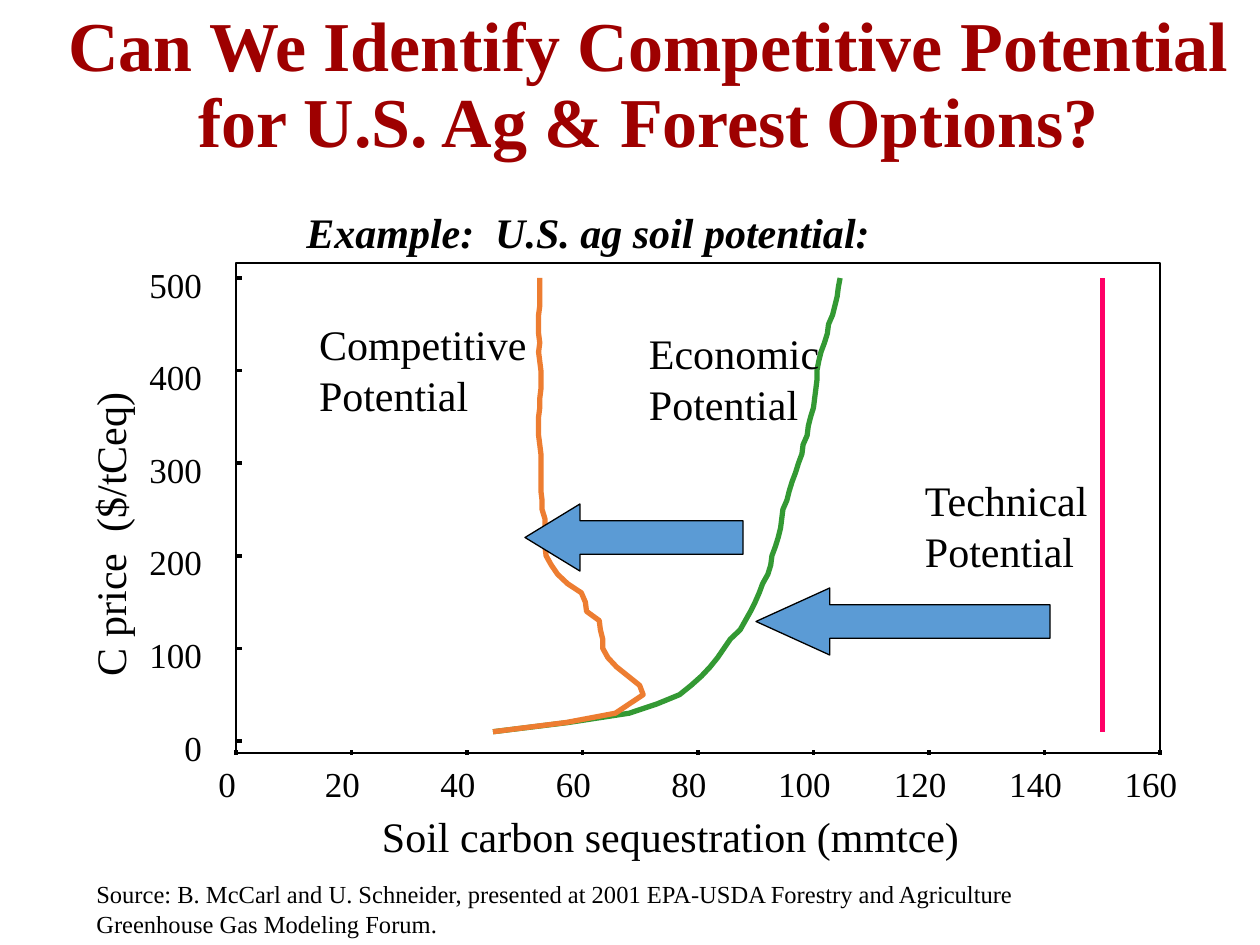
from lxml import etree
from pptx import Presentation
from pptx import util as u
from pptx.dml.color import RGBColor
from pptx.enum import shapes, text
from pptx.oxml.ns import qn

FONT = "Times New Roman"
BLACK = "000000"
PRICE_MAX, PRICE_STEP = 500, 100
CARBON_MAX, CARBON_STEP = 160, 20

# Sequestration (mmtce) at carbon prices of 10, 20, ... 500 $/tCeq
TECHNICAL = [150] * 50
ECONOMIC = [
    44.5, 57.6, 68.1, 72.9, 76.8, 78.8, 80.6, 82.1, 83.4, 84.5,
    85.6, 87.3, 88.2, 89.1, 89.9, 90.6, 91.2, 92.1, 92.6, 92.8,
    93.4, 93.9, 94.3, 94.5, 94.7, 95.4, 95.8, 96.3, 96.9, 97.4,
    98.0, 98.2, 98.9, 99.1, 99.5, 100, 100.2, 100.4, 100.6, 100.6,
    100.9, 101.3, 101.9, 102.4, 102.6, 103.3, 103.7, 104.1, 104.3, 104.6,
]
COMPETITIVE = [
    44.5, 57.2, 65.7, 68.1, 70.5, 69.9, 67.9, 65.9, 64.4, 63.5,
    63.5, 63.1, 62.9, 60.7, 60.5, 59.8, 57.4, 55.7, 54.6, 53.7,
    53.5, 53.7, 53.5, 53.5, 53.0, 53.0, 52.8, 52.8, 52.8, 52.8,
    52.8, 52.6, 52.4, 52.4, 52.4, 52.6, 52.6, 52.8, 52.8, 52.8,
    52.6, 52.4, 52.6, 52.4, 52.4, 52.4, 52.6, 52.6, 52.6, 52.6,
]


def px(length):
    return u.Emu(round(length * 914400 / 126))


def color(hex_string):
    return RGBColor.from_string(hex_string)


def set_all(target, values):
    for name, value in values.items():
        setattr(target, name, value)


def add_text(parent, box, lines, size, inset=True, hue=BLACK, align=text.PP_ALIGN.LEFT,
             frame_format=None, font_format=None, spacing=None):
    label = parent.add_textbox(*map(px, box))
    frame = label.text_frame
    set_all(frame, {"word_wrap": False, "auto_size": text.MSO_AUTO_SIZE.SHAPE_TO_FIT_TEXT})
    if not inset:
        set_all(frame, dict.fromkeys(
            ("margin_left", "margin_top", "margin_right", "margin_bottom"), 0))
    set_all(frame, frame_format or {})
    for number, line in enumerate(lines):
        paragraph = frame.add_paragraph() if number else frame.paragraphs[0]
        set_all(paragraph, {"alignment": align, "line_spacing": spacing})
        run = paragraph.add_run()
        run.text = line
        set_all(run.font, {"name": FONT, "size": u.Pt(size), **(font_format or {})})
        run.font.color.rgb = color(hue)
    return label


def style_outline(shape, hue, width, fill=None):
    shape.shadow.inherit = False
    if fill:
        shape.fill.solid()
        shape.fill.fore_color.rgb = color(fill)
    else:
        shape.fill.background()
    shape.line.color.rgb = color(hue)
    shape.line.width = u.Pt(width)


def add_tick(parent, x1, y1, x2, y2):
    tick = parent.add_connector(shapes.MSO_CONNECTOR.STRAIGHT, *map(px, (x1, y1, x2, y2)))
    tick.line.color.rgb = color(BLACK)
    tick.line.width = 0
    etree.SubElement(tick._element.spPr, qn("a:effectLst"))


def add_curve(parent, amounts, hue, x_of, y_of):
    points = [(px(x_of(amount)), px(y_of(10 * number)))
              for number, amount in enumerate(amounts, 1)]
    builder = parent.build_freeform(*points[0], scale=1.0)
    builder.add_line_segments(points[1:], close=False)
    style_outline(builder.convert_to_shape(), hue, 3)


def add_plot(slide, box):
    left, top, width, height = box
    bottom = top + height
    parent = slide.shapes.add_group_shape().shapes

    def x_of(carbon):
        return left + carbon * width / CARBON_MAX

    def y_of(price):
        return top + 478 - price * 463 / PRICE_MAX

    # Price axis
    for price in range(0, PRICE_MAX + 1, PRICE_STEP):
        y = y_of(price)
        add_tick(parent, left, y, left + 6, y)
        label_width = 18 * len(str(price))
        add_text(parent, (left - 34 - label_width, y - 15, label_width, 43), [str(price)],
                 20, inset=False, align=text.PP_ALIGN.RIGHT)

    # Carbon axis
    for carbon in range(0, CARBON_MAX + 1, CARBON_STEP):
        x = x_of(carbon)
        add_tick(parent, x, bottom + 2, x, bottom - 3)
        label_width = 18 * len(str(carbon))
        add_text(parent, (x - 9 - label_width / 2, bottom + 9, label_width, 43), [str(carbon)],
                 20, inset=False, align=text.PP_ALIGN.CENTER)

    # Frame and axis titles
    frame = parent.add_shape(shapes.MSO_SHAPE.RECTANGLE, *map(px, box))
    style_outline(frame, BLACK, 0)
    price_title = add_text(parent, (left - 289, top + 226, 324, 50), ["C price  ($/tCeq)"],
                           24, inset=False, frame_format={"word_wrap": True})
    price_title.rotation = 270
    add_text(parent, (left + 146, bottom + 58, 629, 50), ["Soil carbon sequestration (mmtce)"],
             24, inset=False, frame_format={"word_wrap": True})

    # Curves and their names
    for name, amounts, hue, dx, dy, name_width in (
        ("Technical", TECHNICAL, "FF0066", 689, 212, 164),
        ("Economic", ECONOMIC, "339933", 413, 65, 171),
        ("Competitive", COMPETITIVE, "ED7D31", 83, 56, 209),
    ):
        add_curve(parent, amounts, hue, x_of, y_of)
        add_text(parent, (left + dx, top + dy, name_width, 102), [name, "Potential"],
                 24, inset=False)


def add_left_arrow(slide, box, head_length):
    arrow = slide.shapes.add_shape(shapes.MSO_SHAPE.LEFT_ARROW, *map(px, box))
    arrow.adjustments[0] = 0.5
    arrow.adjustments[1] = head_length
    style_outline(arrow, BLACK, 0.75, fill="5B9BD5")


def add_heading(slide, box):
    add_text(slide.shapes, box,
             ["Can We Identify Competitive Potential for U.S. Ag & Forest Options?"],
             40, hue="9E0000", align=text.PP_ALIGN.CENTER, spacing=0.9,
             frame_format={"word_wrap": True, "auto_size": text.MSO_AUTO_SIZE.NONE,
                           "vertical_anchor": text.MSO_ANCHOR.MIDDLE},
             font_format={"bold": True})


def main():
    deck = Presentation()
    set_all(deck, {"slide_width": px(1260), "slide_height": px(945)})
    slide = deck.slides.add_slide(deck.slide_layouts[6])

    add_plot(slide, (236, 263, 924, 490))
    # Source and example caption
    add_text(slide.shapes, (84, 873, 955, 72),
             ["Source: B. McCarl and U. Schneider, presented at 2001 EPA-USDA Forestry and Agriculture",
              "Greenhouse Gas Modeling Forum."], 14)
    add_text(slide.shapes, (294, 200, 593, 63), ["Example:  U.S. ag soil potential:"],
             24, font_format={"bold": True, "italic": True})
    # Steps from technical to economic to competitive potential
    add_left_arrow(slide, (756, 588, 294, 67), 1.1)
    add_left_arrow(slide, (525, 504, 218, 67), 0.82)
    add_heading(slide, (16, 20, 1265, 134))
    deck.save("out.pptx")


if __name__ == "__main__":
    main()
